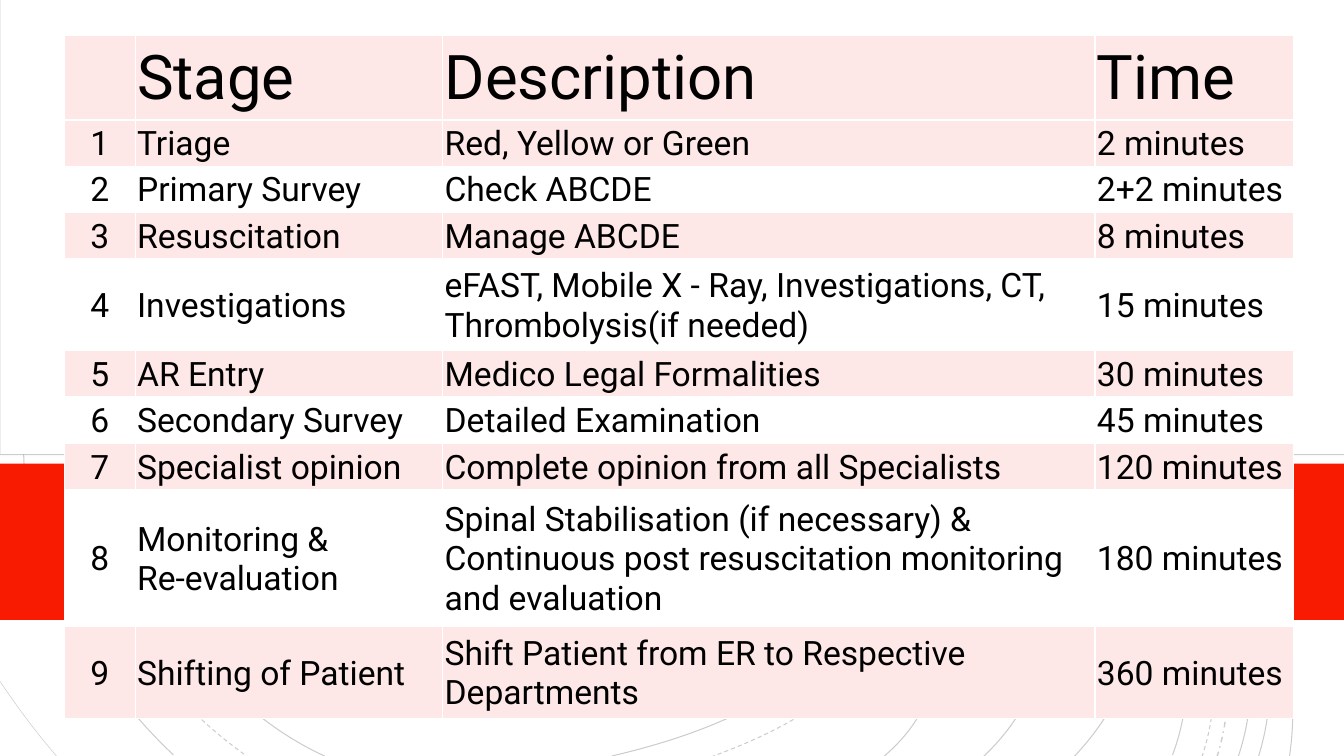
from lxml.etree import SubElement as Sub
from pptx import Presentation
from pptx.dml.color import RGBColor as RGB
from pptx.enum.dml import MSO_LINE as Dash
from pptx.enum.shapes import MSO_SHAPE as Shape
from pptx.enum.text import MSO_ANCHOR as Anchor, PP_ALIGN as Align
from pptx.oxml import parse_xml
from pptx.oxml.ns import nsdecls, qn
from pptx.util import Inches, Pt

WHITE = RGB(0xFF, 0xFF, 0xFF)
BLACK = RGB(0, 0, 0)
RED = RGB(0xF8, 0x1B, 0x02)
PINK = RGB(0xFE, 0xE8, 0xE7)
FONT = "Roboto"
WIDE, HIGH = 13.33, 7.5

# Contour lines: dash, width, start point, then three points per cubic curve
ARCS = [
    (Dash.SOLID, 0.75, (8.76, 7.51),
     [(10.25, 6.25), (8.35, 4.09), (7.38, 3.15), (6.49, 2.3), (5.36, 1.64), (4.12, 1.53),
      (2.87, 1.41), (1.41, 2.08), (0.68, 3.07), (-0.36, 4.47), (0.6, 6.44), (1.72, 7.49)]),
    (Dash.SOLID, 0.75, (6.07, 7.5),
     [(7.1, 7.26), (8.8, 6.67), (8.25, 5.29), (7.73, 3.99), (6.15, 2.78), (4.8, 2.48),
      (3.57, 2.2), (2.16, 2.81), (1.51, 3.91), (0.73, 5.24), (2, 6.95), (3.22, 7.5)]),
    (Dash.DASH, 0.75, (7.05, 7.51),
     [(7.65, 7.29), (8.35, 6.96), (8.67, 6.38), (9.06, 5.68), (8.64, 4.95), (8.17, 4.4),
      (7.23, 3.29), (5.92, 2.27), (4.43, 2.09), (3.19, 1.95), (1.93, 2.67), (1.22, 3.68),
      (0.27, 5.04), (1.27, 6.68), (2.46, 7.51)]),
    (Dash.SOLID, 0.75, (9.75, 7.51),
     [(11.3, 6.04), (9.5, 4.13), (8.38, 3.06), (7.32, 2.06), (6.03, 1.2), (4.58, 0.92),
      (2.84, 0.59), (1.11, 1.43), (0, 2.8)]),
    (Dash.SOLID, 0.38, (0, 6.76), [(0.19, 7.04), (0.37, 7.28), (0.56, 7.5)]),
    (Dash.SOLID, 0.75, (10.65, 7.51),
     [(12.13, 5.95), (10.67, 4.22), (9.44, 3.07), (8.17, 1.89), (6.67, 0.87), (4.98, 0.44),
      (2.98, -0.06), (1.52, 0.46), (0, 1.84)]),
    (Dash.SOLID, 0.75, (11.63, 7.49),
     [(12.26, 5.81), (10.64, 4.01), (9.63, 2.87), (8.58, 1.7), (7.36, 0.66), (5.93, 0)]),
    (Dash.DASH, 0.75, (11.92, 7.51),
     [(12.48, 5.86), (10.98, 4.15), (10, 3.01), (8.97, 1.81), (7.77, 0.73), (6.37, 0)]),
    (Dash.DASH_DOT, 1, (12.07, 7.51),
     [(12.59, 5.85), (11.13, 4.17), (10.15, 3.02), (9.13, 1.83), (7.95, 0.75), (6.58, 0)]),
    (Dash.SOLID, 0.75, (12.28, 7.51),
     [(12.83, 5.88), (11.44, 4.25), (10.46, 3.12), (9.41, 1.9), (8.2, 0.79), (6.79, -0.01)]),
    (Dash.SOLID, 0.75, (12.48, 7.51),
     [(12.99, 5.9), (11.67, 4.32), (10.7, 3.18), (9.66, 1.95), (8.46, 0.83), (7.07, 0)]),
    (Dash.SOLID, 0.75, (12.79, 7.5),
     [(13.03, 5.9), (11.82, 4.38), (10.9, 3.22), (9.93, 2), (8.81, 0.87), (7.52, 0)]),
]

COLS = [0.7, 3.05, 6.47, 1.97]
HEAD = ("", "Stage", "Description", "Time")
# Stage, description, time, row height
STAGES = [
    ("Triage", "Red, Yellow or Green", "2 minutes", 0.46),
    ("Primary Survey", "Check ABCDE", "2+2 minutes", 0.46),
    ("Resuscitation", "Manage ABCDE", "8 minutes", 0.46),
    ("Investigations",
     "eFAST, Mobile X - Ray, Investigations, CT, Thrombolysis(if needed)",
     "15 minutes", 0.91),
    ("AR Entry", "Medico Legal Formalities", "30 minutes", 0.46),
    ("Secondary Survey", "Detailed Examination", "45 minutes", 0.46),
    ("Specialist opinion", "Complete opinion from all Specialists",
     "120 minutes", 0.46),
    ("Monitoring &\nRe-evaluation",
     "Spinal Stabilisation (if necessary) & Continuous post resuscitation "
     "monitoring and evaluation", "180 minutes", 1.36),
    ("Shifting of Patient", "Shift Patient from ER to Respective Departments",
     "360 minutes", 0.91),
]


def faint(line, width, dash):
    """Give a line the pale contour look."""
    line.color.rgb = BLACK
    line.width = Pt(width)
    line.dash_style = dash
    tone = line.fill._xPr.find(".//" + qn("a:srgbClr"))
    Sub(tone, qn("a:alpha"), val="20000")


def bend(arc):
    """Turn each three line segments into one cubic curve."""
    legs = list(arc._element.iter(qn("a:lnTo")))
    for first in range(0, len(legs), 3):
        trio = legs[first:first + 3]
        curve = Sub(trio[0].getparent(), qn("a:cubicBezTo"))
        for leg in trio:
            curve.append(leg[0])
            leg.getparent().remove(leg)


def draw_arcs(slide, left, top):
    for dash, width, start, knots in ARCS:
        first, *rest = [(Inches(left + x), Inches(top + y)) for x, y in [start] + knots]
        form = slide.shapes.build_freeform(*first)
        form.add_line_segments(rest, close=False)
        arc = form.convert_to_shape()
        bend(arc)
        arc.shadow.inherit = False
        arc.fill.background()
        faint(arc.line, width, dash)


def add_rect(slide, left, top, width, height, color):
    rect = slide.shapes.add_shape(
        Shape.RECTANGLE, Inches(left), Inches(top), Inches(width), Inches(height))
    rect.shadow.inherit = False
    rect.fill.solid()
    rect.fill.fore_color.rgb = color
    rect.line.fill.background()
    return rect


def draw_back(slide, left, top, width):
    draw_arcs(slide, left, top)
    panel = add_rect(slide, left, top - 0.01, width + 0.01, 4.52, WHITE)
    faint(panel.line, 0.75, Dash.SOLID)
    add_rect(slide, left, top + 4.6, width, 1.55, RED)


def edge(cell):
    """Draw white borders on all four sides."""
    props = cell._tc.get_or_add_tcPr()
    for side in ("lnL", "lnR", "lnT", "lnB"):
        props.append(parse_xml(
            f'<a:{side} {nsdecls("a")} w="12700"><a:solidFill>'
            f'<a:srgbClr val="{WHITE}"/></a:solidFill></a:{side}>'))


def fill_cell(cell, text, size, align, color):
    edge(cell)
    if color is None:
        cell.fill.background()
    else:
        cell.fill.solid()
        cell.fill.fore_color.rgb = color
    cell.vertical_anchor = Anchor.MIDDLE
    cell.margin_left = cell.margin_right = cell.margin_top = Inches(0.02)
    cell.margin_bottom = 0
    cell.text = text
    for para in cell.text_frame.paragraphs:
        para.alignment = align
        para.font.name = FONT
        para.font.size = Pt(size)
        para.font.color.rgb = BLACK


def draw_table(slide, left, top, width, height):
    rows = [HEAD] + [(str(n), *stage[:3]) for n, stage in enumerate(STAGES, 1)]
    table = slide.shapes.add_table(
        len(rows), len(COLS), Inches(left), Inches(top),
        Inches(width), Inches(height)).table
    table.first_row = table.horz_banding = False
    for col, wide in zip(table.columns, COLS):
        col.width = Inches(wide)
    for row, high in zip(table.rows, [0.84] + [stage[3] for stage in STAGES]):
        row.height = Inches(high)
    for r, row in enumerate(rows):
        # Odd rows are tinted; row 8 is white to cover the red band
        color = PINK if r == 0 or r % 2 else WHITE if r == 8 else None
        for c, text in enumerate(row):
            fill_cell(table.cell(r, c), text, 24 if r else 44,
                      Align.LEFT if c else Align.CENTER, color)


def main():
    deck = Presentation()
    deck.slide_width, deck.slide_height = Inches(WIDE), Inches(HIGH)
    slide = deck.slides.add_slide(deck.slide_layouts[6])
    draw_back(slide, 0, 0, WIDE)
    draw_table(slide, 0.64, 0.35, 12.19, 6.78)
    deck.save("out.pptx")


if __name__ == "__main__":
    main()
